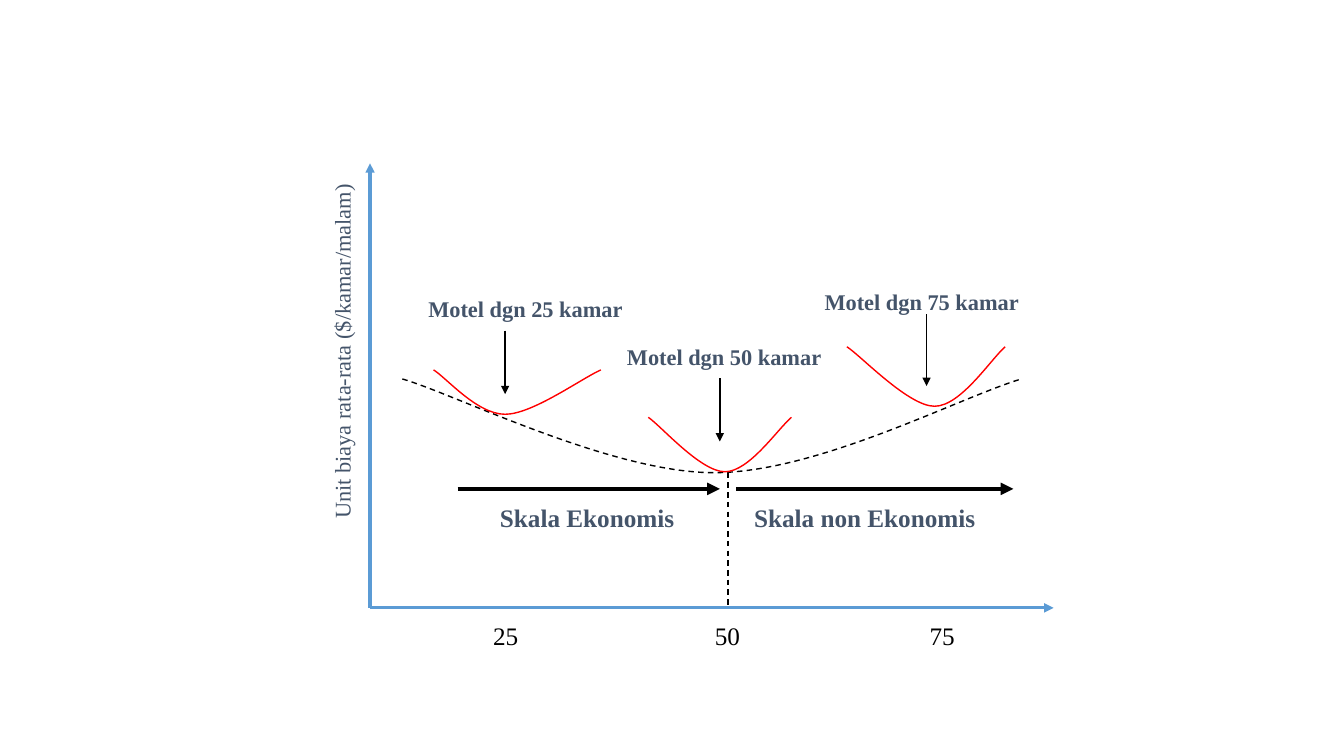
from lxml.etree import SubElement
from pptx import Presentation
from pptx.dml.color import RGBColor
from pptx.enum.dml import MSO_LINE
from pptx.enum.shapes import MSO_CONNECTOR
from pptx.enum.text import PP_ALIGN
from pptx.oxml.ns import qn
from pptx.util import Inches, Pt

COLORS = {"axis": "5B9BD5", "ink": "000000", "curve": "FF0000", "label": "44546A"}
FONT = "Times New Roman"


def rgb(name):
    return RGBColor.from_string(COLORS[name])


def set_attributes(target, values):
    for name, value in values.items():
        setattr(target, name, value)


def style_line(line, color, width, dashed=False):
    line.color.rgb = rgb(color)
    line.width = Pt(width)
    if dashed:
        line.dash_style = MSO_LINE.DASH


def add_line(slide, start, end, color="ink", width=1, dashed=False, arrow=True):
    ends = [Inches(value) for value in (*start, *end)]
    connector = slide.shapes.add_connector(MSO_CONNECTOR.STRAIGHT, *ends)
    style_line(connector.line, color, width, dashed)
    properties = connector.element.spPr
    if arrow:
        SubElement(properties.find(qn("a:ln")), qn("a:tailEnd"), type="triangle")
    SubElement(properties, qn("a:effectLst"))


def add_curve(slide, points, color, dashed=False):
    """Draw cubic Bezier segments: a start, then three points per segment."""
    start, *rest = [(Inches(x), Inches(y)) for x, y in points]
    builder = slide.shapes.build_freeform(*start)
    builder.add_line_segments(rest, close=False)
    curve = builder.convert_to_shape()
    curve.shadow.inherit = False
    curve.fill.background()
    style_line(curve.line, color, 1, dashed)

    # Turn every three straight segments into one Bezier segment
    segments = list(curve.element.iter(qn("a:lnTo")))
    outline = segments[0].getparent()
    for first in range(0, len(segments), 3):
        bezier = SubElement(outline, qn("a:cubicBezTo"))
        for segment in segments[first:first + 3]:
            bezier.append(segment[0])
            outline.remove(segment)


def add_label(slide, text, left, top, width, height, size, color="label",
              bold=False, align=PP_ALIGN.LEFT, rotation=0):
    label = slide.shapes.add_textbox(*map(Inches, (left, top, width, height)))
    label.rotation = rotation
    label.text_frame.word_wrap = True
    paragraph = label.text_frame.paragraphs[0]
    paragraph.alignment = align
    run = paragraph.add_run()
    run.text = text
    set_attributes(run.font, {"name": FONT, "size": Pt(size), "bold": bold})
    run.font.color.rgb = rgb(color)


def main():
    prs = Presentation()
    set_attributes(prs, {"slide_width": Inches(13.33), "slide_height": Inches(7.5)})
    slide = prs.slides.add_slide(prs.slide_layouts[6])

    # Axes
    origin = (3.67, 6.03)
    for axis_end in ((10.45, 6.03), (3.67, 1.62)):
        add_line(slide, origin, axis_end, "axis", 2.25)
    add_label(slide, "Unit biaya rata-rata ($/kamar/malam)",
              1.5, 3.17, 3.78, 0.37, 16, rotation=270)

    # Long-run cost curve and its lowest point
    add_curve(slide, [(3.99, 3.76), (4.51, 3.91), (6.06, 4.69), (7.08, 4.69),
                      (8.11, 4.69), (9.5, 3.95), (10.13, 3.76)], "ink", dashed=True)
    add_line(slide, (7.22, 4.69), (7.22, 6.03), dashed=True, arrow=False)

    # Motels: rooms, curve, label corner, arrow x, arrow top and bottom, tick left
    motels = [
        (25, [(4.3, 3.67), (4.42, 3.74), (4.73, 4.11), (5.01, 4.11),
              (5.28, 4.11), (5.76, 3.76), (5.96, 3.67)],
         (4.15, 2.88), 5.01, (3.28, 3.91), 4.7),
        (50, [(6.43, 4.14), (6.56, 4.23), (6.95, 4.68), (7.19, 4.68),
              (7.43, 4.68), (7.71, 4.26), (7.85, 4.14)],
         (6.12, 3.36), 7.14, (3.75, 4.38), 6.9),
        (75, [(8.4, 3.44), (8.54, 3.53), (9.01, 4.03), (9.27, 4.03),
              (9.53, 4.03), (9.83, 3.56), (9.97, 3.44)],
         (8.08, 2.81), 9.19, (3.12, 3.83), 9.03),
    ]
    for rooms, cost_curve, corner, arrow_x, (top, bottom), tick_left in motels:
        add_curve(slide, cost_curve, "curve")
        add_label(slide, f"Motel dgn {rooms} kamar", *corner, 2.44, 0.37, 16, bold=True)
        add_line(slide, (arrow_x, top), (arrow_x, bottom))
        add_label(slide, str(rooms), tick_left, 6.11, 0.63, 0.4, 18, "ink",
                  align=PP_ALIGN.CENTER)

    # Scale ranges
    ranges = [("Skala Ekonomis", 4.54, 7.14, 4.86, 2.05),
              ("Skala non Ekonomis", 7.3, 10.05, 7.38, 2.91)]
    for text, start_x, end_x, left, width in ranges:
        add_line(slide, (start_x, 4.85), (end_x, 4.85), width=3)
        add_label(slide, text, left, 4.93, width, 0.4, 18, bold=True)

    prs.save("out.pptx")


if __name__ == "__main__":
    main()
